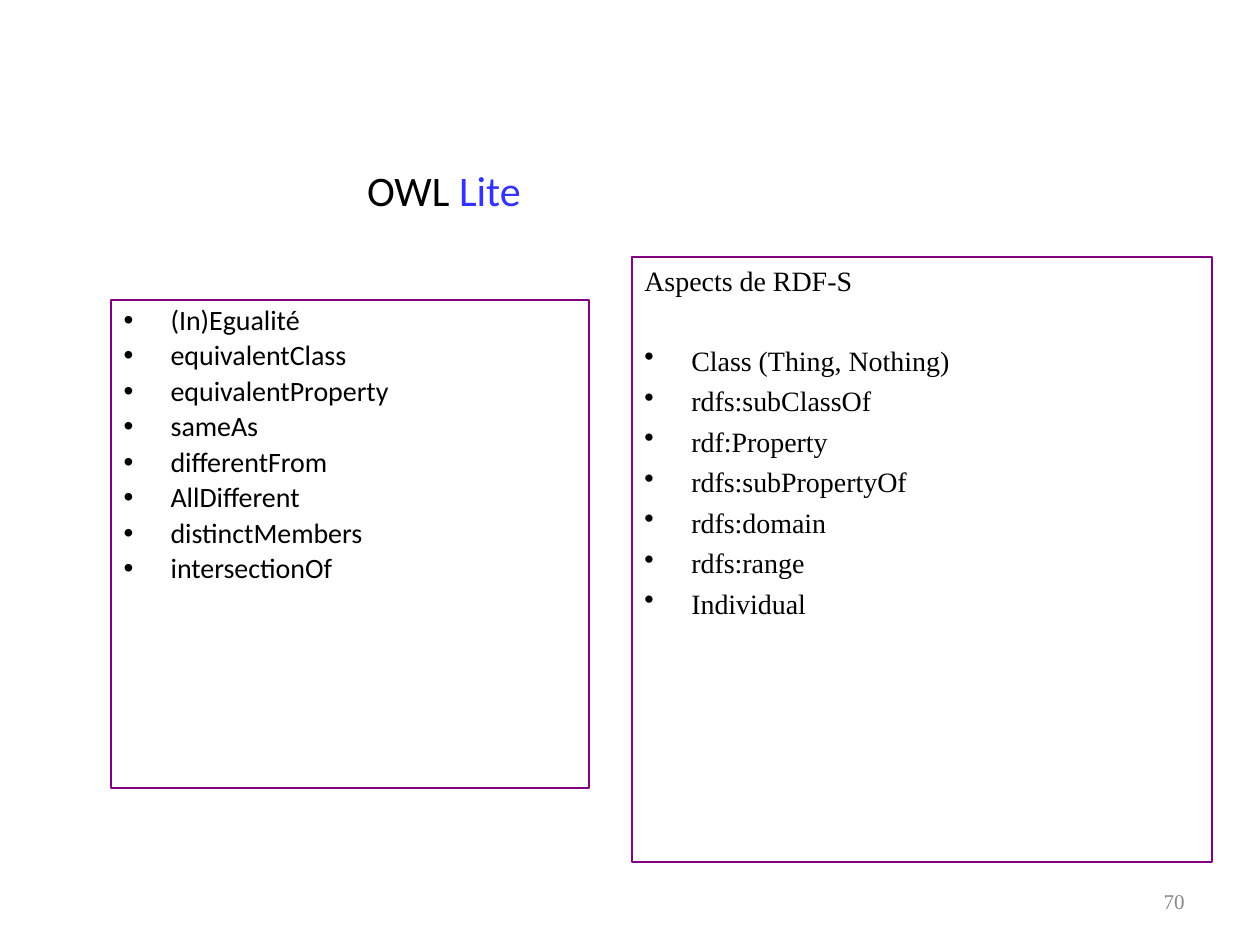
import pptx
import pptx.util
import pptx.dml.color
import pptx.enum.text
import lxml.etree

# Content
TITLE = [("OWL ", "black"), ("Lite", "blue")]
TERMS = ["(In)Egualité", "equivalentClass", "equivalentProperty", "sameAs",
         "differentFrom", "AllDifferent", "distinctMembers", "intersectionOf"]
HEAD = "Aspects de RDF-S"
ASPECTS = ["Class (Thing, Nothing)", "rdfs:subClassOf", "rdf:Property",
           "rdfs:subPropertyOf", "rdfs:domain", "rdfs:range", "Individual"]
NUMBER = "70"

# Places in px: left, top, width, height
PLACES = {"title": (257, 105, 374, 116), "terms": (111, 300, 478, 488),
          "aspects": (632, 257, 580, 605), "number": (903, 876, 294, 50)}
COLORS = {"black": "000000", "blue": "3333FF", "purple": "800080",
          "gray": "898989"}
SANS, SERIF = "Calibri", "Times New Roman"
PX = 914400 // 126
INDENT = 47 * PX
Pt = pptx.util.Pt
ALIGN = pptx.enum.text.PP_ALIGN
ANCHOR = pptx.enum.text.MSO_ANCHOR


def color(name):
    return pptx.dml.color.RGBColor.from_string(COLORS[name])


def place(shape, name, anchor):
    shape.left, shape.top, shape.width, shape.height = (
        v * PX for v in PLACES[name])
    frame = shape.text_frame
    frame.word_wrap = True
    frame.auto_size = pptx.enum.text.MSO_AUTO_SIZE.NONE
    frame.vertical_anchor = anchor
    return frame


def style(para, face, size, tint="black"):
    para.font.name, para.font.size = face, Pt(size)
    para.font.color.rgb = color(tint)


def bullet(para):
    props = para._p.get_or_add_pPr()
    props.set("marL", str(INDENT))
    props.set("indent", str(-INDENT))
    tag = pptx.oxml.ns.qn("a:buChar")
    lxml.etree.SubElement(props, tag).set("char", "•")


def fill(frame, items, face, gap):
    """Write one bulleted paragraph per item."""
    for i, item in enumerate(items):
        first = i == 0 and not frame.text
        para = frame.paragraphs[0] if first else frame.add_paragraph()
        para.text = item
        para.space_before = Pt(gap)
        bullet(para)
        style(para, face, 16)


def border(shape):
    shape.line.color.rgb = color("purple")
    shape.line.width = Pt(0.75)


deck = pptx.Presentation()
deck.slide_width, deck.slide_height = 1260 * PX, 945 * PX
slide = deck.slides.add_slide(deck.slide_layouts[1])
shapes = slide.shapes

# Title
para = place(shapes.title, "title", ANCHOR.BOTTOM).paragraphs[0]
para.alignment = ALIGN.CENTER
style(para, SANS, 24)
for text, tint in TITLE:
    run = para.add_run()
    run.text = text
    run.font.color.rgb = color(tint)

# Left list
body = slide.placeholders[1]
frame = place(body, "terms", ANCHOR.TOP)
fill(frame, TERMS, SANS, 3)
for para in frame.paragraphs:
    para.line_spacing = 0.9
border(body)

# Slide number
box = shapes.add_textbox(0, 0, 0, 0)
para = place(box, "number", ANCHOR.MIDDLE).paragraphs[0]
para.text = NUMBER
para.alignment = ALIGN.RIGHT
style(para, SERIF, 12, "gray")

# Right list under its heading
box = shapes.add_textbox(0, 0, 0, 0)
frame = place(box, "aspects", ANCHOR.TOP)
para = frame.paragraphs[0]
para.text = HEAD
style(para, SERIF, 16)
fill(frame, ASPECTS, SERIF, 4)
frame.paragraphs[1].space_before = Pt(26.5)
border(box)

deck.save("out.pptx")
